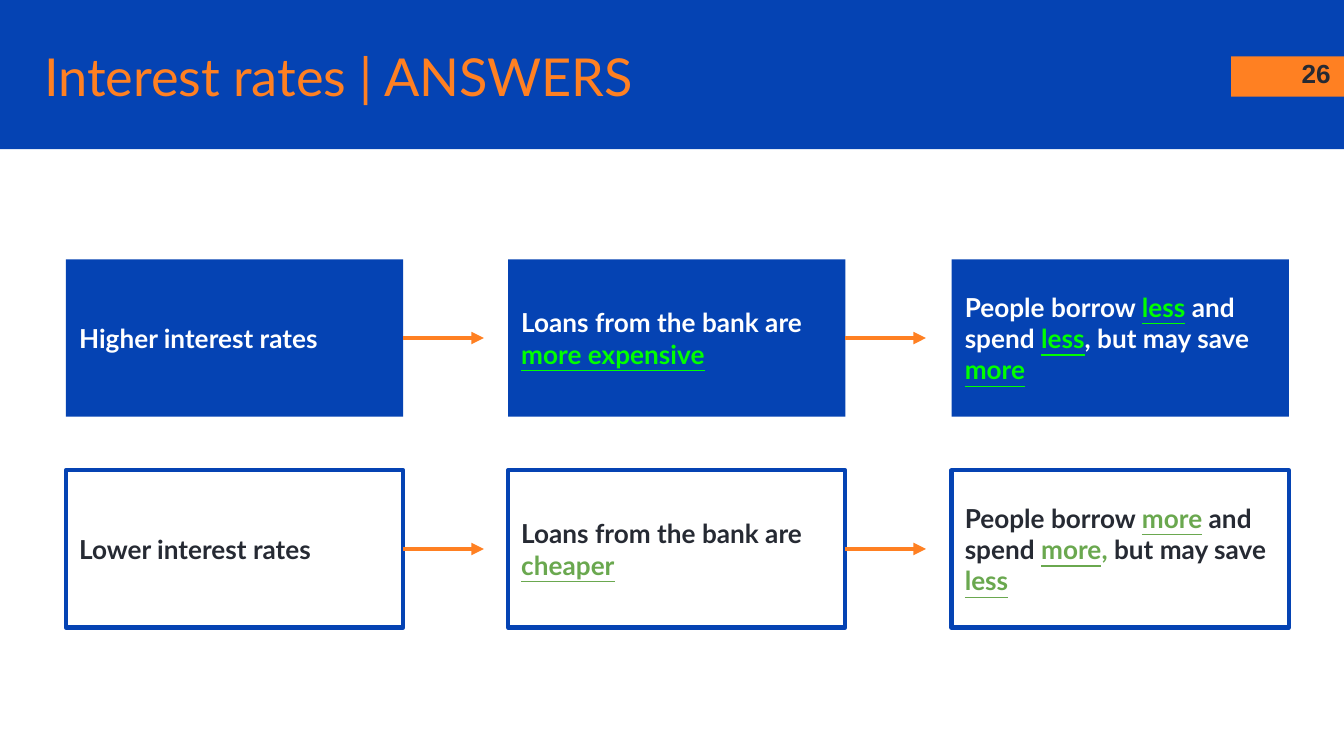
from dataclasses import dataclass
from typing import Optional

from lxml.etree import SubElement
from pptx import Presentation
from pptx.dml.color import RGBColor
from pptx.enum.shapes import MSO_CONNECTOR, MSO_SHAPE
from pptx.enum.text import MSO_ANCHOR as Anchor, PP_ALIGN as Align
from pptx.oxml.ns import qn
from pptx.util import Inches, Pt

BLUE = RGBColor(0x05, 0x43, 0xB3)
ORANGE = RGBColor(0xFF, 0x80, 0x22)
WHITE = RGBColor(0xFF, 0xFF, 0xFF)
DARK = RGBColor(0x26, 0x2A, 0x33)
BRIGHT_GREEN = RGBColor(0x00, 0xFF, 0x00)
SOFT_GREEN = RGBColor(0x6A, 0xA8, 0x4F)

SLIDE_WIDTH = 10
SLIDE_HEIGHT = SLIDE_WIDTH * 9 / 16
COLUMN_LEFTS = (0.49, 3.78, 7.08)
BOX_WIDTH, BOX_HEIGHT = 2.51, 1.17
ARROW_LENGTH = 0.6
LINE_WIDTH = Pt(2.25)
RIGHT_SIDE = 3


@dataclass(frozen=True)
class Run:
    text: str
    color: RGBColor
    underline: bool = False


@dataclass(frozen=True)
class Chain:
    """A row of cause-and-effect boxes joined by arrows."""
    top: float
    fill: RGBColor
    outline: Optional[RGBColor]
    steps: tuple[tuple[Run, ...], ...]


def higher(text: str) -> Run:
    return Run(text, WHITE)


def higher_answer(text: str) -> Run:
    return Run(text, BRIGHT_GREEN, True)


def lower(text: str) -> Run:
    return Run(text, DARK)


def lower_answer(text: str) -> Run:
    return Run(text, SOFT_GREEN, True)


CHAINS = (
    Chain(1.93, BLUE, None, (
        (higher("Higher interest rates"),),
        (higher("Loans from the bank are "), higher_answer("more expensive")),
        (higher("People borrow "), higher_answer("less"),
         higher(" and spend "), higher_answer("less"),
         higher(", but may save "), higher_answer("more")),
    )),
    Chain(3.5, WHITE, BLUE, (
        (lower("Lower interest rates"),),
        (lower("Loans from the bank are "), lower_answer("cheaper")),
        (lower("People borrow "), lower_answer("more"),
         lower(" and spend "), lower_answer("more"), Run(",", SOFT_GREEN),
         lower(" but may save"), lower_answer(" less")),
    )),
)


def write_text(shape, runs: tuple[Run, ...], *, size: float = 14, font: str = "Lato",
               bold: bool = True, align=Align.LEFT, anchor=Anchor.MIDDLE) -> None:
    frame = shape.text_frame
    frame.word_wrap = True
    frame.vertical_anchor = anchor
    frame.margin_left = frame.margin_right = Inches(0.1)
    frame.margin_top = frame.margin_bottom = Inches(0.1)
    paragraph = frame.paragraphs[0]
    paragraph.alignment = align
    for part in runs:
        run = paragraph.add_run()
        run.text = part.text
        run.font.name = font
        run.font.size = Pt(size)
        run.font.bold = bold
        run.font.underline = part.underline
        run.font.color.rgb = part.color


def add_rectangle(slide, left: float, top: float, width: float, height: float,
                  fill: RGBColor, outline: Optional[RGBColor] = None):
    shape = slide.shapes.add_shape(MSO_SHAPE.RECTANGLE, Inches(left), Inches(top),
                                   Inches(width), Inches(height))
    shape.shadow.inherit = False
    shape.fill.solid()
    shape.fill.fore_color.rgb = fill
    if outline is None:
        shape.line.fill.background()
    else:
        shape.line.color.rgb = outline
        shape.line.width = LINE_WIDTH
    return shape


def add_text_box(slide, left: float, top: float, width: float, height: float):
    return slide.shapes.add_textbox(Inches(left), Inches(top), Inches(width), Inches(height))


def add_arrow_from(slide, box) -> None:
    """Draw an arrow that leaves the right side of the box."""
    start = box.left + box.width
    middle = box.top + box.height // 2
    arrow = slide.shapes.add_connector(MSO_CONNECTOR.STRAIGHT, start, middle,
                                       start + Inches(ARROW_LENGTH), middle)
    arrow.begin_connect(box, RIGHT_SIDE)
    arrow.line.color.rgb = ORANGE
    arrow.line.width = LINE_WIDTH
    SubElement(arrow.line._get_or_add_ln(), qn("a:tailEnd"), type="triangle")
    SubElement(arrow._element.spPr, qn("a:effectLst"))


def add_chain(slide, chain: Chain) -> None:
    boxes = []
    for left, runs in zip(COLUMN_LEFTS, chain.steps):
        box = add_rectangle(slide, left, chain.top, BOX_WIDTH, BOX_HEIGHT,
                            chain.fill, chain.outline)
        write_text(box, runs)
        boxes.append(box)
    for box in boxes[:-1]:
        add_arrow_from(slide, box)


def main() -> None:
    presentation = Presentation()
    presentation.slide_width = Inches(SLIDE_WIDTH)
    presentation.slide_height = Inches(SLIDE_HEIGHT)
    slide = presentation.slides.add_slide(presentation.slide_layouts[6])

    add_rectangle(slide, 0, 0, SLIDE_WIDTH, 1.11, BLUE)
    add_rectangle(slide, 9.16, 0.42, 0.84, 0.3, ORANGE)
    page_number = add_text_box(slide, 9.4, 0.33, 0.6, 0.43)
    write_text(page_number, (Run("26", DARK),), font="Arial",
               align=Align.RIGHT, anchor=Anchor.TOP)
    title = add_text_box(slide, 0.23, 0.28, 8.74, 0.56)
    write_text(title, (Run("Interest rates | ANSWERS", ORANGE),), size=28, bold=False)

    for chain in CHAINS:
        add_chain(slide, chain)

    presentation.save("out.pptx")


if __name__ == "__main__":
    main()
